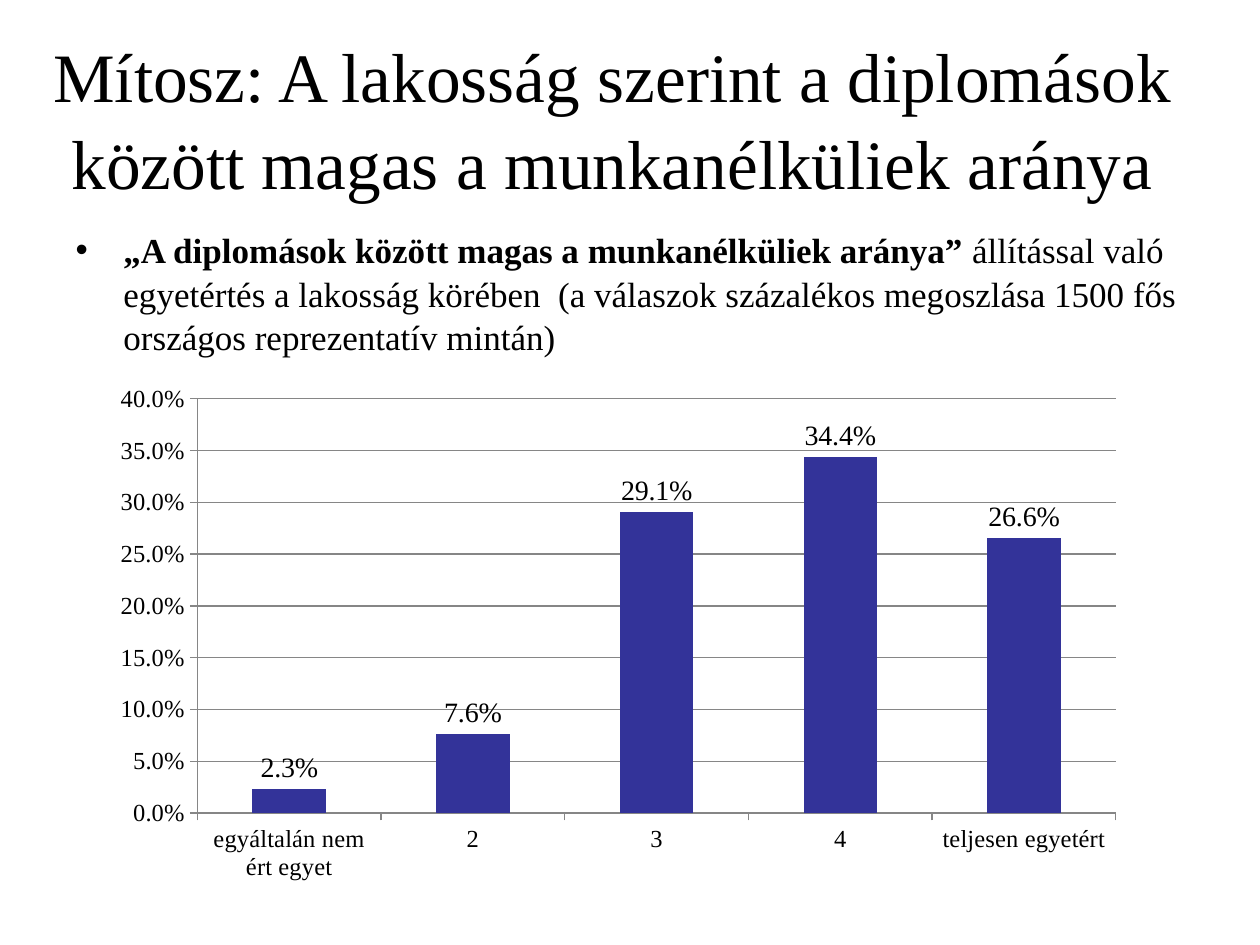
from dataclasses import dataclass

from lxml import etree
from pptx import Presentation
from pptx.chart.data import CategoryChartData
from pptx.dml.color import RGBColor
from pptx.enum.chart import XL_CHART_TYPE, XL_LABEL_POSITION, XL_TICK_MARK
from pptx.enum.text import MSO_ANCHOR, MSO_AUTO_SIZE, PP_ALIGN
from pptx.util import Inches, Pt

COLUMNS = XL_CHART_TYPE.COLUMN_CLUSTERED
LABEL_ABOVE = XL_LABEL_POSITION.OUTSIDE_END
TICK_OUT = XL_TICK_MARK.OUTSIDE
TOP, MIDDLE = MSO_ANCHOR.TOP, MSO_ANCHOR.MIDDLE
LEFT, CENTER = PP_ALIGN.LEFT, PP_ALIGN.CENTER
CHART_NS = "http://schemas.openxmlformats.org/drawingml/2006/chart"


@dataclass(frozen=True)
class Theme:
    font: str = "Times New Roman"
    text: RGBColor = RGBColor(0, 0, 0)
    bar: RGBColor = RGBColor(0x33, 0x33, 0x99)
    grid: RGBColor = RGBColor(0x86, 0x86, 0x86)
    title_size: float = 39.6
    body_size: float = 20
    axis_size: float = 14
    label_size: float = 16
    line_spacing: float = 1.04
    percent: str = "0.0%"


@dataclass(frozen=True)
class Box:
    left: float
    top: float
    width: float
    height: float


THEME = Theme()
TITLE_BOX = Box(0, 0.3, 9.72, 1.25)
BODY_BOX = Box(0.5, 1.75, 9, 4.95)
CHART_BOX = Box(0.83, 2.96, 8.19, 4.11)
PLOT_SHARE = {"x": 0.09, "y": 0.05, "w": 0.89, "h": 0.8}

TITLE = "Mítosz: A lakosság szerint a diplomások között magas a munkanélküliek aránya"
CLAIM = "„A diplomások között magas a munkanélküliek aránya” "
EXPLANATION = ("állítással való egyetértés a lakosság körében  (a válaszok "
               "százalékos megoszlása 1500 fős országos reprezentatív mintán)")
ANSWERS = {"egyáltalán nem ért egyet": 0.023, "2": 0.076, "3": 0.291,
           "4": 0.344, "teljesen egyetért": 0.266}


def set_font(font, size: float, bold: bool = False) -> None:
    values = {"name": THEME.font, "size": Pt(size), "bold": bold}
    for name, value in values.items():
        setattr(font, name, value)
    font.color.rgb = THEME.text


def fill_placeholder(sp, box: Box, runs: list[tuple[str, bool]], size: float,
                     anchor, align):
    """Place the placeholder, write its runs and return the paragraph."""
    for name in ("left", "top", "width", "height"):
        setattr(sp, name, Inches(getattr(box, name)))
    tf = sp.text_frame
    tf.word_wrap = True
    tf.auto_size = MSO_AUTO_SIZE.NONE
    tf.vertical_anchor = anchor
    p = tf.paragraphs[0]
    p.alignment = align
    p.line_spacing = THEME.line_spacing
    for text, bold in runs:
        r = p.add_run()
        r.text = text
        set_font(r.font, size, bold)
    return p


def set_plot_area(chart) -> None:
    """Fix the inner plot area as shares of the chart's size."""
    def add(parent, tag: str, value: str | None = None):
        child = etree.SubElement(parent, f"{{{CHART_NS}}}{tag}")
        if value is not None:
            child.set("val", value)
        return child

    plot_area = chart.plots[0]._element.getparent()
    for old in plot_area.findall(f"{{{CHART_NS}}}layout"):
        plot_area.remove(old)
    layout = add(plot_area, "layout")
    plot_area.insert(0, layout)
    manual = add(layout, "manualLayout")
    add(manual, "layoutTarget", "inner")
    for axis in "xy":
        add(manual, f"{axis}Mode", "edge")
    for key, share in PLOT_SHARE.items():
        add(manual, key, str(share))


def add_answer_chart(s) -> None:
    data = CategoryChartData(number_format=THEME.percent)
    data.categories = ANSWERS.keys()
    data.add_series("Series 1", ANSWERS.values())
    box = CHART_BOX
    chart = s.shapes.add_chart(COLUMNS, Inches(box.left), Inches(box.top),
                               Inches(box.width), Inches(box.height), data).chart
    chart.has_legend = chart.has_title = False
    set_font(chart.font, 10)
    set_plot_area(chart)

    for axis in (chart.category_axis, chart.value_axis):
        axis.major_tick_mark = TICK_OUT
        axis.format.line.color.rgb = THEME.grid
        set_font(axis.tick_labels.font, THEME.axis_size)
    values = chart.value_axis
    values.minimum_scale, values.maximum_scale, values.major_unit = 0, 0.4, 0.05
    values.tick_labels.number_format = THEME.percent
    values.tick_labels.number_format_is_linked = False
    values.major_gridlines.format.line.color.rgb = THEME.grid

    plot = chart.plots[0]
    plot.gap_width = 150
    plot.vary_by_categories = False
    fill = plot.series[0].format.fill
    fill.solid()
    fill.fore_color.rgb = THEME.bar
    labels = plot.series[0].data_labels
    formats = {"show_value": True, "position": LABEL_ABOVE,
               "number_format": THEME.percent, "number_format_is_linked": False}
    for name, value in formats.items():
        setattr(labels, name, value)
    set_font(labels.font, THEME.label_size)


def main() -> None:
    prs = Presentation()
    prs.slide_width, prs.slide_height = Inches(10), Inches(7.5)
    s = prs.slides.add_slide(prs.slide_layouts[1])
    fill_placeholder(s.shapes.title, TITLE_BOX, [(TITLE, False)],
                     THEME.title_size, MIDDLE, CENTER)
    p = fill_placeholder(s.placeholders[1], BODY_BOX,
                         [(CLAIM, True), (EXPLANATION, False)],
                         THEME.body_size, TOP, LEFT)
    p.space_before = Pt(0.2 * THEME.body_size)
    indent = Inches(0.38)
    pPr = p._p.get_or_add_pPr()
    pPr.set("marL", str(indent))
    pPr.set("indent", str(-indent))
    add_answer_chart(s)
    prs.save("out.pptx")


if __name__ == "__main__":
    main()
